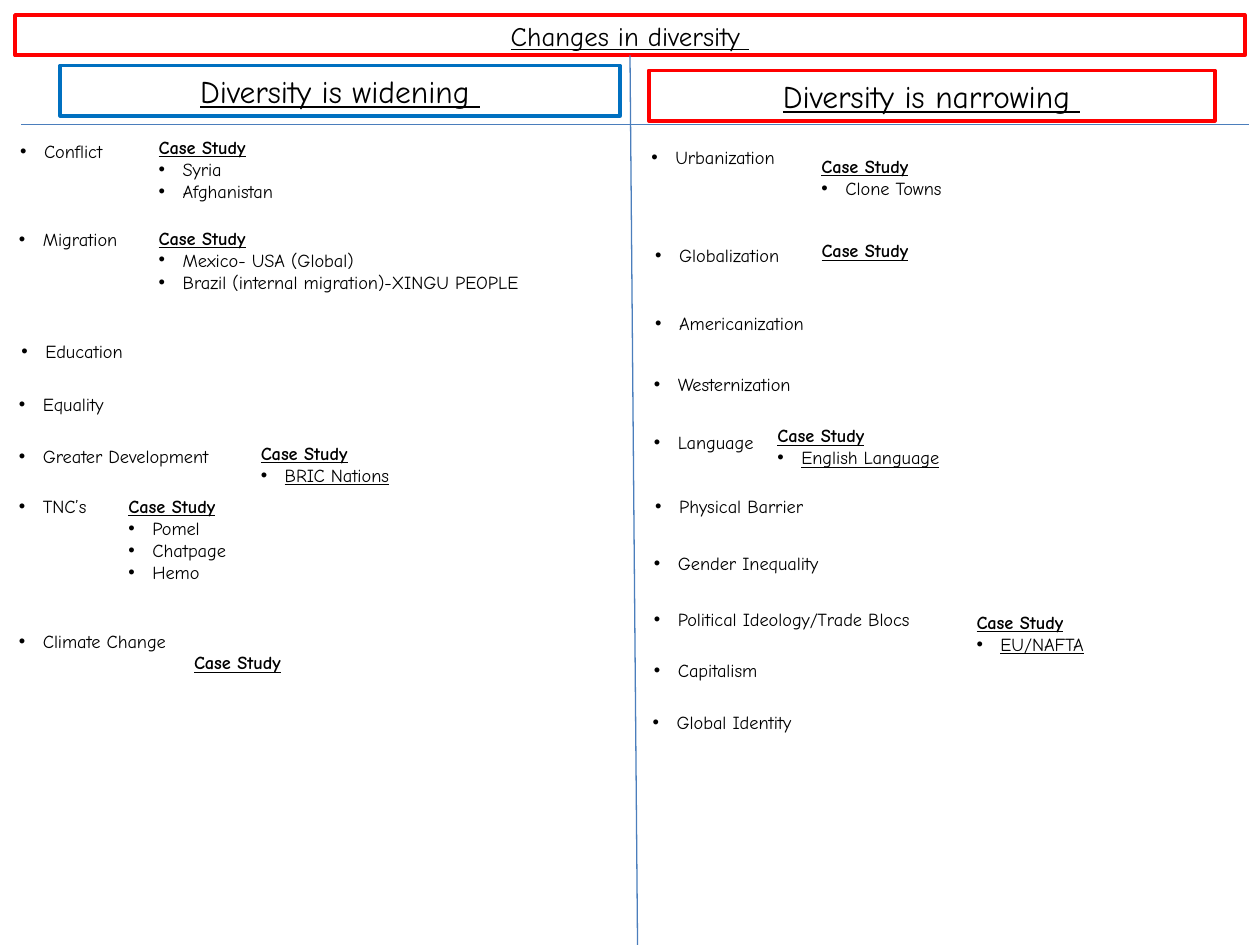
"""Build the slide that sets widening against narrowing diversity."""
from lxml.etree import SubElement
from pptx import Presentation
from pptx.dml.color import RGBColor
from pptx.enum.shapes import MSO_CONNECTOR as Connector, MSO_SHAPE as Shape
from pptx.enum.text import MSO_ANCHOR as Anchor, PP_ALIGN as Align
from pptx.oxml.ns import qn
from pptx.util import Inches, Pt

COLUMNS, ROWS = 1000, 750
FONT, BODY_SIZE = "Comic Neue", 10.5
TOPIC_WIDTH, LINE_ROWS, PADDING_ROWS = 444, 17.5, 10
RED, BLUE, WHITE, BLACK, RULE = "FF0000", "0070C0", "FFFFFF", "000000", "4B7EBC"
color = RGBColor.from_string

deck = Presentation()
deck.slide_width, deck.slide_height = Inches(10), Inches(7.5)
page = deck.slides.add_slide(deck.slide_layouts[6])
column, row = deck.slide_width / COLUMNS, deck.slide_height / ROWS


def add_box(left, top, width, height, outline, filled=True, **frame_format):
    box = page.shapes.add_shape(Shape.RECTANGLE, round(left * column), round(top * row),
                                round(width * column), round(height * row))
    box.shadow.inherit = False
    if filled:
        box.fill.solid()
        box.fill.fore_color.rgb = color(WHITE)
    else:
        box.fill.background()
    box.line.color.rgb = color(outline)
    box.line.width = Pt(2.25)
    frame = {"word_wrap": True, "margin_left": 0, "margin_right": 0} | frame_format
    for name, value in frame.items():
        setattr(box.text_frame, name, value)
    return box


def write(para, text, bullet=False, align=Align.LEFT, size=BODY_SIZE, **font_format):
    para.alignment = align
    if bullet:
        properties = para._p.get_or_add_pPr()
        properties.set("marL", str(Inches(0.19)))
        properties.set("indent", str(-Inches(0.19)))
        SubElement(properties, qn("a:buFont"), typeface="Arial")
        SubElement(properties, qn("a:buChar"), char="•")
    span = para.add_run()
    span.text = text
    span.font.color.rgb = color(BLACK)
    for name, value in ({"name": FONT, "size": Pt(size)} | font_format).items():
        setattr(span.font, name, value)


headings = [
    ("Diversity is widening ", 48, 52, 444, 40, BLUE, True, 18),
    ("Changes in diversity ", 12, 12, 976, 32, RED, False, 15.3),
    ("Diversity is narrowing ", 515, 56, 449, 40, RED, False, 18),
]
for text, left, top, width, height, outline, filled, size in headings:
    box = add_box(left, top, width, height, outline, filled, vertical_anchor=Anchor.MIDDLE)
    write(box.text_frame.paragraphs[0], text, align=Align.CENTER, size=size, underline=True)

dividers = [(500, 44, 506, 750), (17, 99, 991, 99)]
for start_x, start_y, end_x, end_y in dividers:
    divider = page.shapes.add_connector(Connector.STRAIGHT, round(start_x * column), round(start_y * row),
                                        round(end_x * column), round(end_y * row))
    divider.line.color.rgb = color(RULE)
    divider.line.width = Pt(0.75)
    SubElement(divider._element.spPr, qn("a:effectLst"))

topics = [
    ("Conflict", 16, 106),
    ("Migration", 15, 176),
    ("Education", 17, 265),
    ("Equality", 15, 307),
    ("Greater Development", 15, 348),
    ("TNC’s", 15, 388),
    ("Climate Change", 15, 495),
    ("Urbanization", 517, 111),
    ("Globalization", 520, 189),
    ("Americanization", 520, 243),
    ("Westernization", 519, 291),
    ("Language", 519, 337),
    ("Physical Barrier", 520, 388),
    ("Gender Inequality", 519, 433),
    ("Political Ideology/Trade Blocs", 519, 478),
    ("Capitalism", 519, 518),
    ("Global Identity", 518, 559),
]
for text, left, top in topics:
    box = add_box(left, top, TOPIC_WIDTH, LINE_ROWS + PADDING_ROWS, WHITE, vertical_anchor=Anchor.MIDDLE)
    write(box.text_frame.paragraphs[0], text, bullet=True)

case_studies = [
    (126, 103, 130, False, ["Syria", "Afghanistan"]),
    (126, 175, 319, False, ["Mexico- USA (Global)", "Brazil (internal migration)-XINGU PEOPLE"]),
    (102, 388, 264, False, ["Pomel", "Chatpage", "Hemo"]),
    (652, 118, 130, False, ["Clone Towns"]),
    (775, 480, 201, True, ["EU/NAFTA"]),
    (617, 332, 201, True, ["English Language"]),
    (154, 512, 264, False, []),
    (207, 346, 264, True, ["BRIC Nations"]),
    (652, 185, 201, False, []),
]
for left, top, width, underlined, examples in case_studies:
    lines = max(2, 1 + len(examples))
    box = add_box(left, top, width, lines * LINE_ROWS + PADDING_ROWS, WHITE, vertical_anchor=Anchor.TOP)
    write(box.text_frame.paragraphs[0], "Case Study", bold=True, underline=True)
    for example in examples:
        write(box.text_frame.add_paragraph(), example, bullet=True, underline=underlined)

deck.save("out.pptx")
